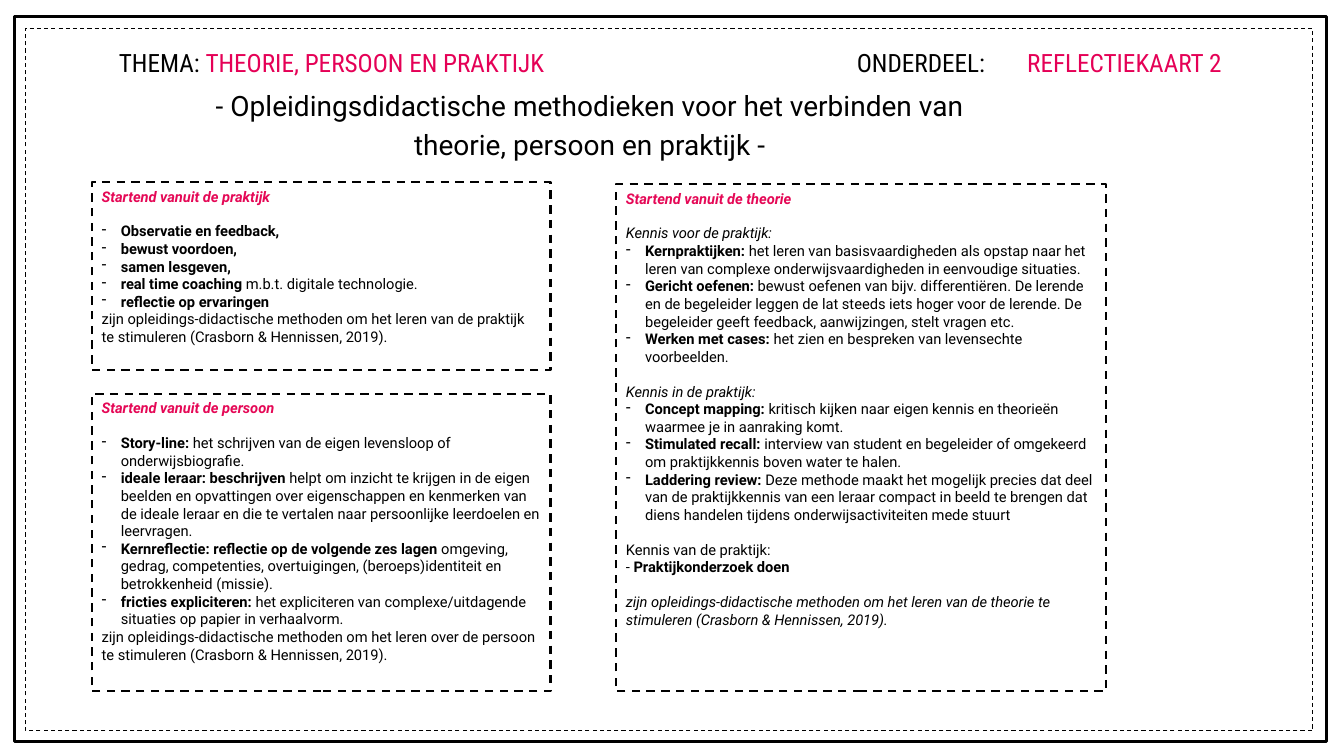
"""Build the reflection card slide on linking theory, person and practice."""
from lxml import etree
from pptx import Presentation
from pptx.dml.color import RGBColor
from pptx.enum.dml import MSO_LINE
from pptx.enum.shapes import MSO_SHAPE
from pptx.enum.text import MSO_ANCHOR, PP_ALIGN
from pptx.oxml.ns import qn
from pptx.util import Inches, Pt

RECT = MSO_SHAPE.RECTANGLE
DASH = MSO_LINE.DASH
TOP = MSO_ANCHOR.TOP
LEFT = PP_ALIGN.LEFT
CENTER = PP_ALIGN.CENTER

COLORS = {"ink": "000000", "paper": "FFFFFF", "pink": "E50056", "heading": "E50856"}
BODY = {"name": "Roboto", "size": Pt(10.5)}
LARGE = {"name": "Roboto", "size": Pt(20)}
HEADER = {"name": "Roboto Condensed", "size": Pt(18)}
LINE_GAP = Pt(12.3)

PRACTICE = [
    ("heading", "Startend vanuit de praktijk", ""),
    ("first bullet", "Observatie en feedback,", ""),
    ("bullet", "bewust voordoen,", ""),
    ("bullet", "samen lesgeven,", ""),
    ("bullet", "real time coaching ", "m.b.t. digitale technologie."),
    ("bullet", "reflectie op ervaringen", ""),
    ("plain", "", "zijn opleidings-didactische methoden om het leren van de praktijk te "
     "stimuleren (Crasborn & Hennissen, 2019)."),
]
PERSON = [
    ("heading", "Startend vanuit de persoon", ""),
    ("first bullet", "Story-line: ", "het schrijven van de eigen levensloop of onderwijsbiografie."),
    ("bullet", "ideale leraar: beschrijven ", "helpt om inzicht te krijgen in de eigen beelden en "
     "opvattingen over eigenschappen en kenmerken van de ideale leraar en die te vertalen naar "
     "persoonlijke leerdoelen en leervragen."),
    ("bullet", "Kernreflectie: reflectie op de volgende zes lagen ", "omgeving, gedrag, "
     "competenties, overtuigingen, (beroeps)identiteit en betrokkenheid (missie)."),
    ("bullet", "fricties expliciteren: ", "het expliciteren van complexe/uitdagende situaties op "
     "papier in verhaalvorm."),
    ("plain", "", "zijn opleidings-didactische methoden om het leren over de persoon te "
     "stimuleren (Crasborn & Hennissen, 2019)."),
]
THEORY = [
    ("heading", "Startend vanuit de theorie", ""),
    ("first italic", "", "Kennis voor de praktijk:"),
    ("bullet", "Kernpraktijken: ", "het leren van basisvaardigheden als opstap naar het leren van "
     "complexe onderwijsvaardigheden in eenvoudige situaties."),
    ("bullet", "Gericht oefenen: ", "bewust oefenen van bijv. differentiëren. De lerende en de "
     "begeleider leggen de lat steeds iets hoger voor de lerende. De begeleider geeft feedback, "
     "aanwijzingen, stelt vragen etc."),
    ("bullet", "Werken met cases: ", "het zien en bespreken van levensechte voorbeelden."),
    ("first italic", "", "Kennis in de praktijk:"),
    ("bullet", "Concept mapping: ", "kritisch kijken naar eigen kennis en theorieën waarmee je in "
     "aanraking komt."),
    ("bullet", "Stimulated recall: ", "interview van student en begeleider of omgekeerd om "
     "praktijkkennis boven water te halen."),
    ("bullet", "Laddering review: ", "Deze methode maakt het mogelijk precies dat deel van de "
     "praktijkkennis van een leraar compact in beeld te brengen dat diens handelen tijdens "
     "onderwijsactiviteiten mede stuurt"),
    ("first plain", "", "Kennis van de praktijk:"),
    ("plain", "- Praktijkonderzoek doen", ""),
    ("first italic", "", "zijn opleidings-didactische methoden om het leren van de theorie te "
     "stimuleren (Crasborn & Hennissen, 2019)."),
]


def add_run(p, text, color="ink", **fmt):
    """Append a formatted run to a paragraph."""
    r = p.add_run()
    r.text = text
    for key, value in fmt.items():
        setattr(r.font, key, value)
    r.font.color.rgb = RGBColor.from_string(COLORS[color])


def add_bullet(p):
    """Give a paragraph a hanging dash."""
    pPr = p._p.get_or_add_pPr()
    pPr.set("marL", str(Inches(0.19)))
    pPr.set("indent", str(-Inches(0.19)))
    etree.SubElement(pPr, qn("a:buChar")).set("char", "-")


def add_tabs(p, *stops):
    """Set left tab stops, in inches from the text edge."""
    tabs = etree.SubElement(p._p.get_or_add_pPr(), qn("a:tabLst"))
    for stop in stops:
        etree.SubElement(tabs, qn("a:tab"), pos=str(Inches(stop)), algn="l")


def add_frame(s, box, width, dash=None, fill=None):
    """Draw an outlined rectangle."""
    sp = s.shapes.add_shape(RECT, *map(Inches, box))
    sp.shadow.inherit = False
    if fill:
        sp.fill.solid()
        sp.fill.fore_color.rgb = RGBColor.from_string(COLORS[fill])
    else:
        sp.fill.background()
    sp.line.color.rgb = RGBColor.from_string(COLORS["ink"])
    sp.line.width = Pt(width)
    if dash:
        sp.line.dash_style = dash
    return sp


def add_text(s, box):
    """Add a wrapping text box and return its first paragraph."""
    tf = s.shapes.add_textbox(*map(Inches, box)).text_frame
    tf.word_wrap = True
    return tf.paragraphs[0]


def add_card(s, box, rows):
    """Add a dashed card with a heading and its methods."""
    tf = add_frame(s, box, 1.5, DASH, "paper").text_frame
    tf.word_wrap = True
    tf.vertical_anchor = TOP
    for i, (kind, term, text) in enumerate(rows):
        p = tf.add_paragraph() if i else tf.paragraphs[0]
        p.alignment = LEFT
        if "bullet" in kind:
            add_bullet(p)
        if "first" in kind:
            p.space_before = LINE_GAP
        if kind == "heading":
            add_run(p, term, "heading", bold=True, italic=True, **BODY)
            continue
        if term.startswith("- "):
            add_run(p, "- ", **BODY)
            term = term[2:]
        if term:
            add_run(p, term, bold=True, **BODY)
        if text:
            add_run(p, text, italic="italic" in kind, **BODY)


def add_header(s):
    """Add the theme and part labels on one tabbed line."""
    p = add_text(s, (1.08, 0.36, 11.44, 0.64))
    p.line_spacing = 1.1
    add_tabs(p, 7.32, 9.01)
    add_run(p, "THEMA: ", **HEADER)
    add_run(p, "THEORIE, PERSOON EN PRAKTIJK", "pink", **HEADER)
    add_run(p, "\t", **LARGE)
    add_run(p, "ONDERDEEL:", **HEADER)
    add_run(p, "\t", **LARGE)
    add_run(p, "REFLECTIEKAART 2", "pink", **HEADER)


def add_title(s):
    """Add the centred title."""
    p = add_text(s, (1.6, 0.78, 8.5, 0.85))
    p.alignment = CENTER
    p.line_spacing = 1.15
    add_run(p, "- Opleidingsdidactische methodieken voor het verbinden van theorie, "
            "persoon en praktijk -", **LARGE)


def main():
    """Build and save the slide."""
    prs = Presentation()
    prs.slide_width, prs.slide_height = Inches(13.33), Inches(7.5)
    s = prs.slides.add_slide(prs.slide_layouts[6])
    add_title(s)
    add_frame(s, (0.14, 0.16, 13.02, 7.2), 2.25)
    add_frame(s, (0.25, 0.28, 12.77, 6.97), 0.75, DASH)
    add_header(s)
    add_card(s, (0.91, 1.81, 4.55, 1.86), PRACTICE)
    add_card(s, (6.11, 1.83, 4.86, 5.03), THEORY)
    add_card(s, (0.91, 3.91, 4.55, 2.95), PERSON)
    prs.save("out.pptx")


if __name__ == "__main__":
    main()
